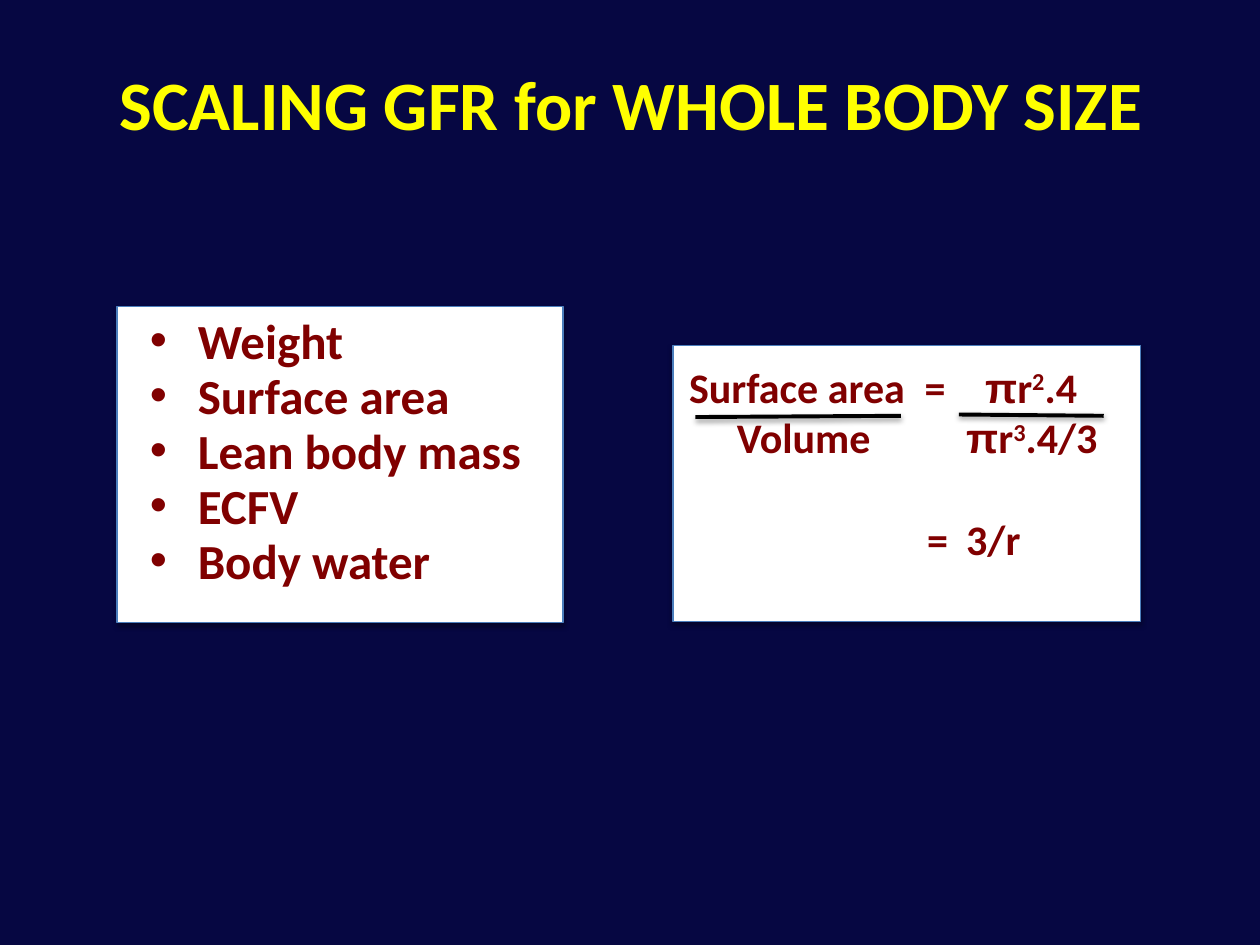
from dataclasses import dataclass

from lxml import etree
from pptx import Presentation
from pptx.dml.color import RGBColor
from pptx.enum import shapes, text
from pptx.oxml.ns import qn
from pptx.util import Inches, Pt


@dataclass(frozen=True)
class Theme:
    background: RGBColor = RGBColor.from_string("060742")
    title: RGBColor = RGBColor.from_string("FFFF00")
    ink: RGBColor = RGBColor.from_string("800000")
    card: RGBColor = RGBColor.from_string("FFFFFF")
    border: RGBColor = RGBColor.from_string("4B7EBC")
    rule: RGBColor = RGBColor.from_string("000000")
    font: str = "Calibri"
    symbol_font: str = "Arial"
    title_size: float = 39.6
    list_size: float = 28
    equation_size: float = 24


THEME = Theme()
METHODS = ["Weight", "Surface area", "Lean body mass", "ECFV", "Body water"]
# Each equation line: tab stops in inches, then (text, format) runs
SYMBOL, RAISED = {"name": THEME.symbol_font}, {"raised": True}
EQUATION = [
    ([1.87, 2.35], [("Surface area\t=\t", {}), ("π", SYMBOL), ("r", {}),
                    ("2", RAISED), (".4", {})]),
    ([0.38, 2.2], [("\tVolume\t", {}), ("π", SYMBOL), ("r", {}),
                   ("3", RAISED), (".4/3", {})]),
    ([1.89, 2.2], [("\t=\t3/r", {})]),
]


def set_attrs(target, values):
    for name, value in values.items():
        setattr(target, name, value)


def add_run(p, content, size, color, name=THEME.font, raised=False):
    r = p.add_run()
    r.text = content
    set_attrs(r.font, {"name": name, "size": Pt(size), "bold": True})
    r.font.color.rgb = color
    if raised:
        r.font._element.set("baseline", "30000")


def add_shadow(sp, opacity, distance):
    """Cast a soft black shadow straight down; distance is in points."""
    effects = etree.SubElement(sp._element.spPr, qn("a:effectLst"))
    shadow = etree.SubElement(effects, qn("a:outerShdw"), blurRad=str(Pt(3.1)),
                              dist=str(Pt(distance)), dir="5400000", rotWithShape="0")
    color = etree.SubElement(shadow, qn("a:srgbClr"), val="000000")
    etree.SubElement(color, qn("a:alpha"), val=str(opacity * 1000))


def add_card(parent, x, y, w, h):
    sp = parent.add_shape(shapes.MSO_SHAPE.RECTANGLE, x, y, w, h)
    sp.fill.solid()
    sp.fill.fore_color.rgb = THEME.card
    sp.line.color.rgb = THEME.border
    sp.line.width = Pt(0.75)
    add_shadow(sp, 35, 1.8)


def add_fraction_bar(parent, x1, y1, x2, y2):
    line = parent.add_connector(shapes.MSO_CONNECTOR.STRAIGHT, x1, y1, x2, y2)
    line.line.color.rgb = THEME.rule
    line.line.width = Pt(2.25)
    add_shadow(line, 38, 1.6)


def place_title(s, x, y, w, h):
    title = s.shapes.title
    set_attrs(title, {"left": x, "top": y, "width": w, "height": h})
    tf = title.text_frame
    tf.vertical_anchor = text.MSO_ANCHOR.MIDDLE
    p = tf.paragraphs[0]
    p.alignment = text.PP_ALIGN.CENTER
    add_run(p, "SCALING GFR for WHOLE BODY SIZE", THEME.title_size, THEME.title)


def place_methods(s, x, y, w, h):
    add_card(s.shapes, x, y, w, h)
    body = s.placeholders[1]
    s.shapes._spTree.append(body._element)  # bring the list in front of its card
    set_attrs(body, {"left": x + Inches(0.16), "top": y + Inches(0.09),
                     "width": w - Inches(0.16), "height": h - Inches(0.09)})
    tf = body.text_frame
    set_attrs(tf, {"auto_size": text.MSO_AUTO_SIZE.NONE,
                   "vertical_anchor": text.MSO_ANCHOR.TOP})
    for i, method in enumerate(METHODS):
        p = tf.add_paragraph() if i else tf.paragraphs[0]
        set_attrs(p, {"line_spacing": Pt(25.8), "space_before": Pt(5.6)})
        pPr = p._p.get_or_add_pPr()
        pPr.set("marL", str(Inches(0.38)))
        pPr.set("indent", str(-Inches(0.38)))
        etree.SubElement(pPr, qn("a:buFont"), typeface=THEME.symbol_font)
        etree.SubElement(pPr, qn("a:buChar"), char="•")
        add_run(p, method, THEME.list_size, THEME.ink)


def place_equation(s, x, y, w, h):
    group = s.shapes.add_group_shape().shapes
    add_card(group, x, y, w, h)
    box = group.add_textbox(x + Inches(0.03), y + Inches(0.08),
                            w - Inches(0.12), h - Inches(0.08))
    tf = box.text_frame
    tf.word_wrap = True
    for i, (stops, runs) in enumerate(EQUATION):
        p = tf.add_paragraph() if i else tf.paragraphs[0]
        if i == len(EQUATION) - 1:
            p.space_before = Pt(29)
        tabs = etree.SubElement(p._p.get_or_add_pPr(), qn("a:tabLst"))
        for stop in stops:
            etree.SubElement(tabs, qn("a:tab"), pos=str(Inches(stop)), algn="l")
        for content, style in runs:
            add_run(p, content, THEME.equation_size, THEME.ink, **style)
    for x1, y1, x2, y2 in [(0.18, 0.57, 1.81, 0.56), (2.27, 0.55, 3.42, 0.56)]:
        add_fraction_bar(group, x + Inches(x1), y + Inches(y1),
                         x + Inches(x2), y + Inches(y2))


def main():
    prs = Presentation()
    prs.slide_width, prs.slide_height = Inches(10), Inches(7.5)
    s = prs.slides.add_slide(prs.slide_layouts[1])
    s.background.fill.solid()
    s.background.fill.fore_color.rgb = THEME.background
    place_title(s, Inches(0.51), Inches(0.19), Inches(9), Inches(1.25))
    place_equation(s, Inches(5.34), Inches(2.74), Inches(3.71), Inches(2.19))
    place_methods(s, Inches(0.93), Inches(2.43), Inches(3.54), Inches(2.51))
    prs.save("out.pptx")


if __name__ == "__main__":
    main()
